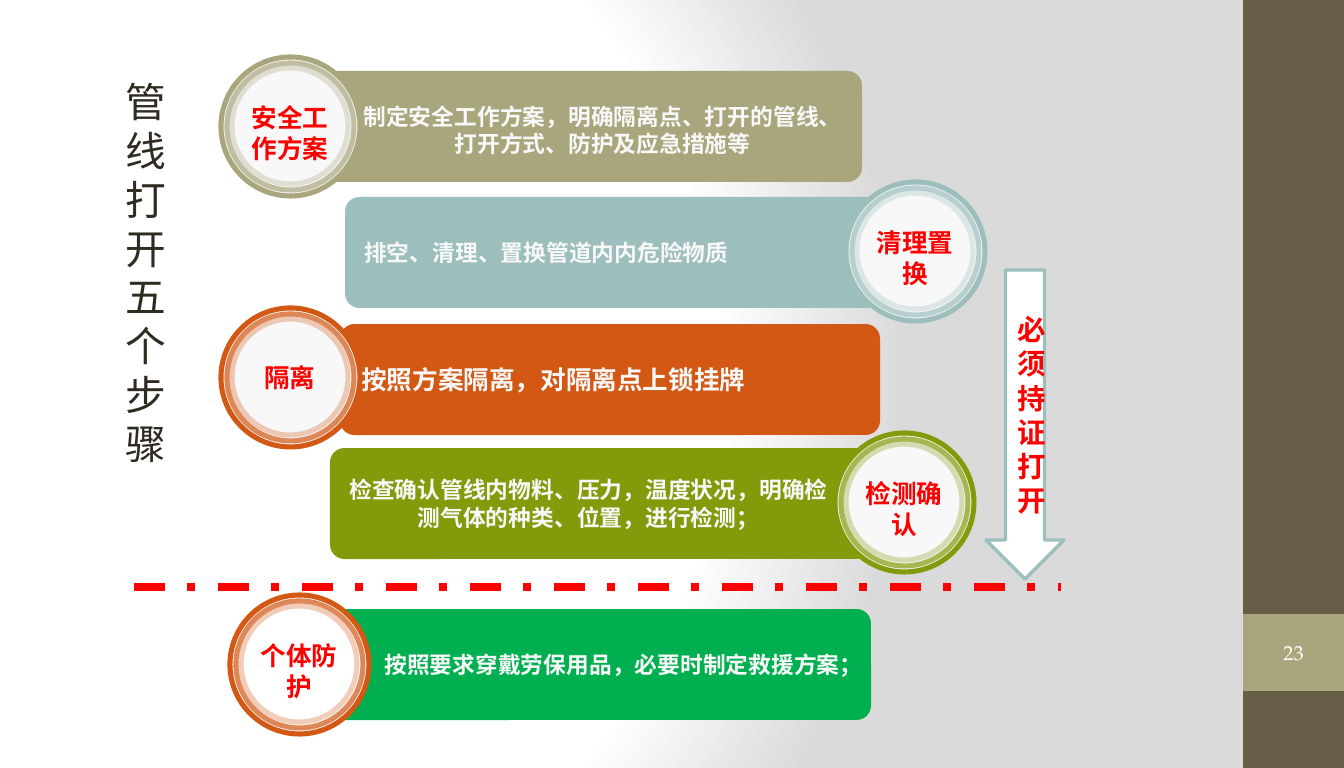
from lxml import etree
from pptx import Presentation
from pptx.dml.color import RGBColor as RGB
from pptx.enum.dml import MSO_LINE as Dash
from pptx.enum.shapes import MSO_CONNECTOR as Conn, MSO_SHAPE as Kind
from pptx.enum.text import MSO_ANCHOR as Anchor, MSO_AUTO_SIZE as Fit, PP_ALIGN as Align
from pptx.oxml import parse_xml
from pptx.oxml.ns import qn
from pptx.util import Pt

PX = 7495
SANS = "Noto Sans CJK SC"
RED, PALE, WHITE = "FF0000", "F8F8F8", "FFFFFF"
TAN, TEAL, RUST, OLIVE, GREEN = "A9A57C", "9CBEBD", "D25814", "849A0A", "00B050"

deck = Presentation()
deck.slide_width, deck.slide_height = 1344 * PX, 768 * PX
slide = deck.slides.add_slide(deck.slide_layouts[5])
shapes = slide.shapes


def draw(kind, x, y, w, h, fill=None, line=None, weight=3):
    shape = shapes.add_shape(kind, x * PX, y * PX, w * PX, h * PX)
    shape.shadow.inherit = False
    if fill:
        shape.fill.solid()
        shape.fill.fore_color.rgb = RGB.from_string(fill)
    else:
        shape.fill.background()
    if line:
        shape.line.color.rgb = RGB.from_string(line)
        shape.line.width = Pt(weight)
    else:
        shape.line.fill.background()
    return shape


def write(shape, text, size, hue, face=SANS, bold=True, align=Align.CENTER,
          pad=(12, 6, 12, 6), anchor=Anchor.MIDDLE):
    frame = shape.text_frame
    frame.word_wrap = True
    frame.auto_size = Fit.NONE
    frame.vertical_anchor = anchor
    frame.margin_left, frame.margin_top, frame.margin_right, frame.margin_bottom = (
        n * PX for n in pad)
    frame.text = text
    para = frame.paragraphs[0]
    para.alignment = align
    font = para.font
    font.size, font.bold, font.name = Pt(size), bold, face
    font.color.rgb = RGB.from_string(hue)
    east = etree.SubElement(para._p.pPr.find(qn("a:defRPr")), qn("a:ea"))
    east.set("typeface", SANS)


fill = slide.background.fill
fill.gradient()
grad = slide._element.cSld.bg.bgPr.find(qn("a:gradFill"))
stops = "".join(
    f'<a:gs pos="{pos}"><a:srgbClr val="{hue}"/></a:gs>'
    for pos, hue in [(0, WHITE), (75000, WHITE), (100000, "DADADA")])
grad.getparent().replace(grad, parse_xml(
    '<a:gradFill xmlns:a="http://schemas.openxmlformats.org/drawingml/2006/main">'
    f'<a:gsLst>{stops}</a:gsLst><a:path path="circle">'
    '<a:fillToRect l="20000" t="50000" r="100000" b="50000"/></a:path></a:gradFill>'))

draw(Kind.RECTANGLE, 1243, 0, 101, 768, "675E47")
badge = draw(Kind.RECTANGLE, 1243, 614, 101, 77, TAN)
write(badge, "23", 12, WHITE, "TeX Gyre Pagella", False)

title = shapes.title
title.left, title.top, title.width, title.height = (n * PX for n in (116, 72, 94, 466))
write(title, "管线打开五个步骤", 24, "2F2B20", bold=False, align=Align.LEFT,
      pad=(10, 5, 10, 5), anchor=Anchor.TOP)

steps = [
    ("安全工作方案", "制定安全工作方案，明确隔离点、打开的管线、打开方式、防护及应急措施等",
     TAN, TAN, 322, 71, 290, 126, 13.4, Align.CENTER, (36, 7, 15, 0)),
    ("清理置换", "排空、清理、置换管道内内危险物质",
     TEAL, TEAL, 345, 197, 915, 251, 13.4, Align.LEFT, (15, 0, 12, 0)),
    ("隔离", "按照方案隔离，对隔离点上锁挂牌",
     RUST, RUST, 340, 324, 290, 377, 15.1, Align.LEFT, (17, 0, 12, 0)),
    ("检测确认", "检查确认管线内物料、压力，温度状况，明确检测气体的种类、位置，进行检测；",
     OLIVE, OLIVE, 330, 448, 904, 502, 13.4, Align.CENTER, (15, 0, 38, 0)),
    ("个体防护", "按照要求穿戴劳保用品，必要时制定救援方案；",
     GREEN, RUST, 331, 609, 299, 664, 13.4, Align.CENTER, (48, 0, 3, 0)),
]
for name, text, hue, rim, x, y, mid, row, size, align, pad in steps:
    bar = draw(Kind.ROUNDED_RECTANGLE, x, y, 540, 111, hue)
    bar.adjustments[0] = 0.13
    write(bar, text, size, PALE, "Calibri", align=align, pad=pad)
    core = WHITE if hue == GREEN else None
    for wide, alpha, disc in [(139, 100, PALE), (127, 70, core), (116, 30, None)]:
        ring = draw(Kind.OVAL, mid - wide // 2, row - wide // 2, wide, wide, disc, rim)
        tint = ring.line._ln.find(".//" + qn("a:srgbClr"))
        etree.SubElement(tint, qn("a:alpha")).set("val", str(alpha * 1000))
    write(ring, name, 15.1, RED, pad=(0, 14 if len(name) > 3 else 0, 0, 0))

rule = shapes.add_connector(Conn.STRAIGHT, 134 * PX, 587 * PX, 1061 * PX, 587 * PX)
rule.line.color.rgb = RGB.from_string(RED)
rule.line.width = Pt(4.5)
rule.line.dash_style = Dash.DASH_DOT
etree.SubElement(rule._element.spPr, qn("a:effectLst"))

arrow = draw(Kind.DOWN_ARROW, 986, 270, 78, 309, WHITE, TEAL, 2)
write(arrow, "必须持证打开", 16.8, RED)

deck.save("out.pptx")
